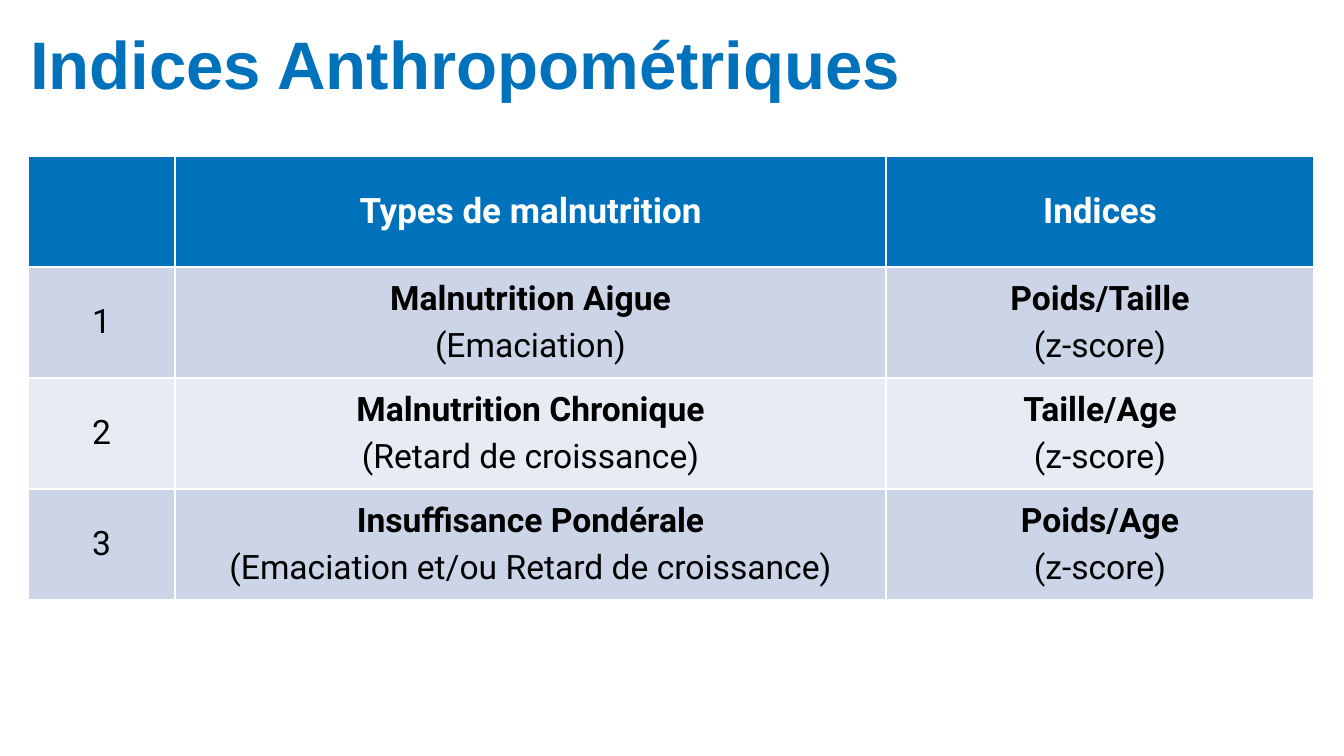
from dataclasses import dataclass

from pptx import Presentation
from pptx.dml.color import RGBColor
from pptx.enum.text import MSO_ANCHOR, MSO_AUTO_SIZE, PP_ALIGN
from pptx.util import Emu, Pt

EMU_PER_PX = 914400 / 100.8


@dataclass(frozen=True)
class Theme:
    blue: RGBColor = RGBColor.from_string("0072BC")
    white: RGBColor = RGBColor.from_string("FFFFFF")
    black: RGBColor = RGBColor.from_string("000000")
    bands: tuple = (RGBColor.from_string("CCD5E7"), RGBColor.from_string("E7EBF3"))
    title_font: str = "Arial"
    table_font: str = "Roboto"
    title_size: Pt = Pt(48)
    header_size: Pt = Pt(25)
    body_size: Pt = Pt(24)
    line_gap: Pt = Pt(5)


@dataclass(frozen=True)
class Malnutrition:
    kind: str
    detail: str
    index: str


THEME = Theme()
HEADERS = ("", "Types de malnutrition", "Indices")
COLUMN_WIDTHS = (147, 711, 428)
ROW_HEIGHT = 111
UNIT = "(z-score)"
MALNUTRITIONS = (
    Malnutrition("Malnutrition Aigue", "(Emaciation)", "Poids/Taille"),
    Malnutrition("Malnutrition Chronique", "(Retard de croissance)", "Taille/Age"),
    Malnutrition("Insuffisance Pondérale", "(Emaciation et/ou Retard de croissance)", "Poids/Age"),
)


def px(n: int) -> Emu:
    return Emu(round(n * EMU_PER_PX))


def style_font(font, name: str, size: Pt, color: RGBColor, bold: bool) -> None:
    font.name, font.size, font.bold = name, size, bold
    font.color.rgb = color


def fill_cell(cell, lines: tuple, fill: RGBColor, size: Pt, color: RGBColor) -> None:
    """Write (text, bold) lines, centred, on a solid fill."""
    cell.fill.solid()
    cell.fill.fore_color.rgb = fill
    cell.vertical_anchor = MSO_ANCHOR.MIDDLE
    tf = cell.text_frame
    for i, (text, bold) in enumerate(lines):
        p = tf.add_paragraph() if i else tf.paragraphs[0]
        p.text = text
        p.alignment = PP_ALIGN.CENTER
        p.space_before = THEME.line_gap if i else Pt(0)
        style_font(p.font, THEME.table_font, size, color, bold)


def set_title(s, text: str) -> None:
    sp = s.shapes.title
    sp.left, sp.top, sp.width, sp.height = px(30), px(13), px(1287), px(91)
    tf = sp.text_frame
    tf.margin_left = tf.margin_top = tf.margin_right = tf.margin_bottom = 0
    tf.word_wrap = True
    tf.auto_size = MSO_AUTO_SIZE.NONE
    tf.vertical_anchor = MSO_ANCHOR.BOTTOM
    p = tf.paragraphs[0]
    p.text = text
    p.alignment = PP_ALIGN.LEFT
    p.line_spacing = 0.9
    style_font(p.font, THEME.title_font, THEME.title_size, THEME.blue, True)


def add_indices_table(s) -> None:
    rows = len(MALNUTRITIONS) + 1
    table = s.shapes.add_table(
        rows, len(HEADERS), px(28), px(156), px(sum(COLUMN_WIDTHS)), px(rows * ROW_HEIGHT)
    ).table
    for column, width in zip(table.columns, COLUMN_WIDTHS):
        column.width = px(width)
    for row in table.rows:
        row.height = px(ROW_HEIGHT)
    for c, header in enumerate(HEADERS):
        fill_cell(table.cell(0, c), ((header, True),), THEME.blue, THEME.header_size, THEME.white)
    for r, item in enumerate(MALNUTRITIONS, start=1):
        contents = (
            ((str(r), False),),
            ((item.kind, True), (item.detail, False)),
            ((item.index, True), (UNIT, False)),
        )
        band = THEME.bands[(r - 1) % len(THEME.bands)]
        for c, lines in enumerate(contents):
            fill_cell(table.cell(r, c), lines, band, THEME.body_size, THEME.black)


def main() -> None:
    prs = Presentation()
    prs.slide_width, prs.slide_height = px(1344), px(756)
    s = prs.slides.add_slide(prs.slide_layouts.get_by_name("Title Only"))
    set_title(s, "Indices Anthropométriques")
    add_indices_table(s)
    prs.save("out.pptx")


if __name__ == "__main__":
    main()
